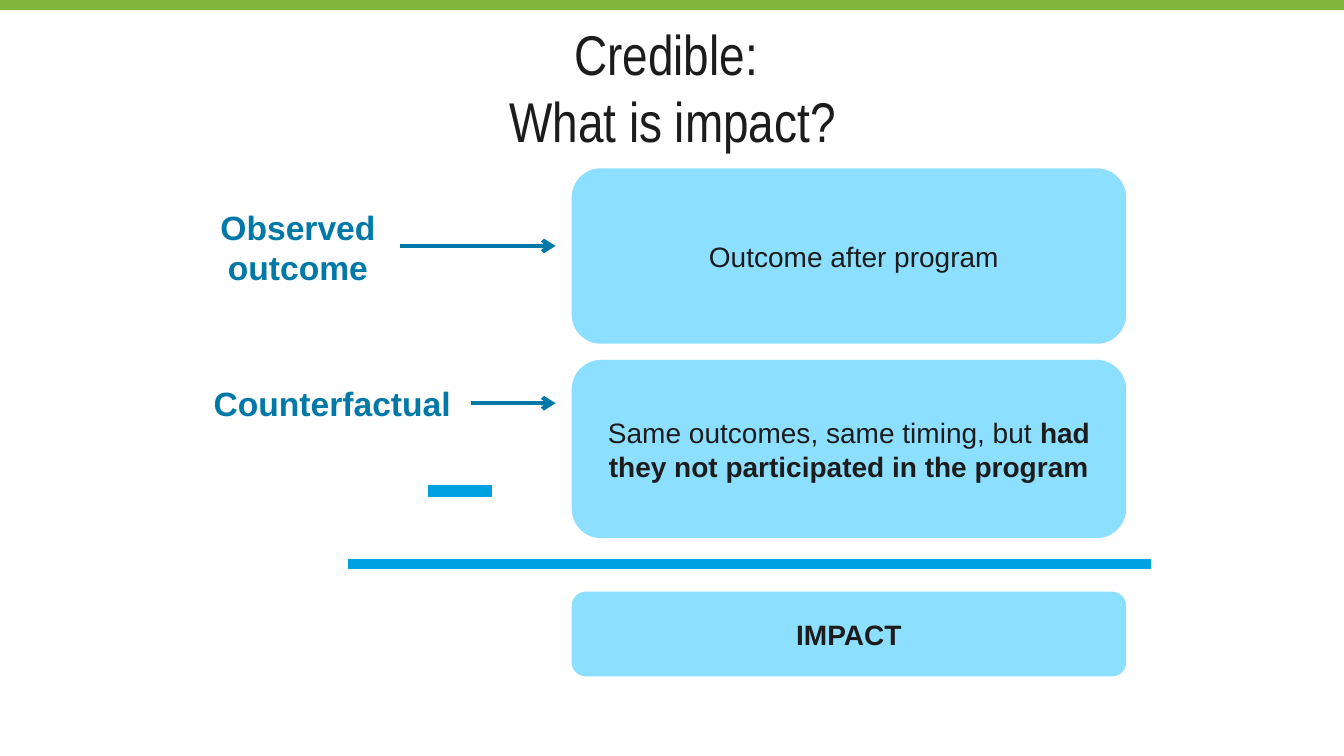
import pptx
import pptx.util
import pptx.dml.color
import pptx.enum.shapes
import pptx.enum.text
import pptx.oxml
import pptx.oxml.ns

Inches, Pt = pptx.util.Inches, pptx.util.Pt
Color = pptx.dml.color.RGBColor
Shape = pptx.enum.shapes.MSO_SHAPE
Align = pptx.enum.text.PP_ALIGN
Anchor = pptx.enum.text.MSO_ANCHOR
Fit = pptx.enum.text.MSO_AUTO_SIZE

GREEN = Color(0x81, 0xB5, 0x3C)
INK = Color(0x1C, 0x1C, 0x1C)
PALE = Color(0x8D, 0xDF, 0xFF)
BLUE = Color(0x00, 0xA1, 0xE0)
DEEP = Color(0x00, 0x79, 0xA8)

TITLE = {"name": "Arial Narrow", "size": Pt(40), "color": INK}
BODY = {"name": "Arial", "size": Pt(20), "color": INK}
LABEL = {"name": "Arial", "size": Pt(24), "color": DEEP, "bold": True}


def write(para, text, style, **extra):
    """Add a run; a vertical tab in the text becomes a line break."""
    for i, part in enumerate(text.split("\v")):
        if i:
            para.add_line_break()
        run = para.add_run()
        run.text = part
        for key, value in {**style, **extra}.items():
            if key == "color":
                run.font.color.rgb = value
            else:
                setattr(run.font, key, value)


def solid(slide, kind, box, fill, line=None):
    shape = slide.shapes.add_shape(kind, *map(Inches, box))
    shape.shadow.inherit = False
    shape.fill.solid()
    shape.fill.fore_color.rgb = fill
    if line:
        shape.line.color.rgb = line
        shape.line.width = Pt(0.85)
    else:
        shape.line.fill.background()
    return shape


def head(slide, box):
    frame = slide.shapes.add_textbox(*map(Inches, box)).text_frame
    frame.word_wrap = True
    frame.vertical_anchor = Anchor.MIDDLE
    for side in ("left", "top", "right", "bottom"):
        setattr(frame, "margin_" + side, 0)
    para = frame.paragraphs[0]
    para.alignment = Align.CENTER
    write(para, "Credible: \vWhat is impact?", TITLE)


def card(slide, box, parts, indent=0):
    """Rounded box whose parts are (text, bold) pairs."""
    frame = solid(slide, Shape.ROUNDED_RECTANGLE, box, PALE).text_frame
    frame.word_wrap = True
    frame.vertical_anchor = Anchor.MIDDLE
    para = frame.paragraphs[0]
    para.alignment = Align.CENTER
    para.space_after = Pt(6)
    if indent:
        para._p.get_or_add_pPr().set("marL", str(Inches(indent)))
    for text, bold in parts:
        write(para, text, BODY, bold=bold)


def label(slide, box, text, wrap):
    frame = slide.shapes.add_textbox(*map(Inches, box)).text_frame
    frame.word_wrap = wrap
    frame.auto_size = Fit.SHAPE_TO_FIT_TEXT
    para = frame.paragraphs[0]
    para.alignment = Align.CENTER if wrap else Align.LEFT
    write(para, text, LABEL)


def arrow(slide, left, right, y):
    line = slide.shapes.add_connector(
        pptx.enum.shapes.MSO_CONNECTOR.STRAIGHT,
        *map(Inches, (left, y, right, y)))
    line.line.color.rgb = DEEP
    line.line.width = Pt(3)
    tail = pptx.oxml.parse_xml(
        f'<a:tailEnd {pptx.oxml.ns.nsdecls("a")} type="arrow"/>')
    line.line._get_or_add_ln().append(tail)
    line._element.spPr.append(pptx.oxml.parse_xml(
        f'<a:effectLst {pptx.oxml.ns.nsdecls("a")}/>'))


def cards(slide, left, width):
    card(slide, (left, 1.67, width, 1.74),
         [("Outcome after program", False)], 0.1)
    card(slide, (left, 3.57, width, 1.77),
         [("Same outcomes, same timing, but ", False),
          ("had they not participated in the program", True)])
    card(slide, (left, 5.87, width, 0.84), [("IMPACT", True)])


def signs(slide):
    """Minus sign and the rule above the result."""
    for box in ((4.14, 4.64, 0.85, 0.46), (2.02, 5.42, 10.83, 0.35)):
        solid(slide, Shape.MATH_MINUS, box, BLUE, BLUE)


def labels(slide, left, tip):
    label(slide, (left, 3.75, 2.65, 0.5), "Counterfactual", False)
    arrow(slide, left + 2.65, tip, 4)
    label(slide, (left, 2, 1.87, 0.91), "Observed outcome", True)
    arrow(slide, left + 1.95, tip, 2.44)


def main():
    deck = pptx.Presentation()
    deck.slide_width, deck.slide_height = Inches(13.33), Inches(7.5)
    slide = deck.slides.add_slide(deck.slide_layouts[6])
    solid(slide, Shape.RECTANGLE, (0, 0, 13.33, 0.1), GREEN)
    head(slide, (0.67, 0.23, 12, 1.26))
    cards(slide, 5.67, 5.5)
    signs(slide)
    labels(slide, 2.02, 5.51)
    deck.save("out.pptx")


if __name__ == "__main__":
    main()
